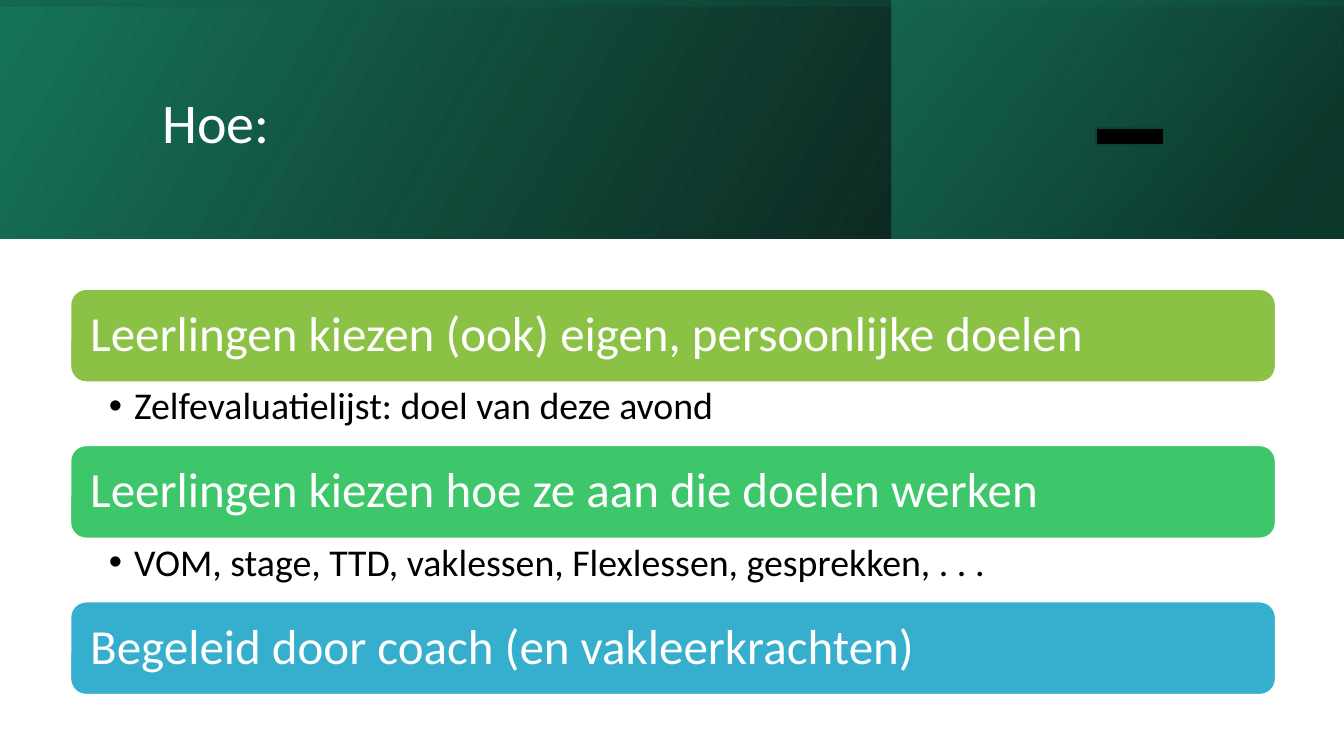
from pptx import Presentation
from pptx.dml.color import RGBColor
from pptx.enum.shapes import MSO_SHAPE
from pptx.enum.text import MSO_ANCHOR, MSO_AUTO_SIZE, PP_ALIGN
from pptx.oxml import parse_xml
from pptx.oxml.ns import nsdecls
from pptx.util import Inches, Pt

RECT, ROUND = MSO_SHAPE.RECTANGLE, MSO_SHAPE.ROUNDED_RECTANGLE
MIDDLE, TOP = MSO_ANCHOR.MIDDLE, MSO_ANCHOR.TOP
LEFT, FIXED = PP_ALIGN.LEFT, MSO_AUTO_SIZE.NONE


def color(code):
    return RGBColor.from_string(code)


def write(shape, text, size, code, anchor, pads):
    frame = shape.text_frame
    frame.word_wrap = True
    frame.auto_size = FIXED
    frame.vertical_anchor = anchor
    frame.margin_left, frame.margin_top, frame.margin_right, frame.margin_bottom = map(Inches, pads)
    par = frame.paragraphs[0]
    par.alignment = LEFT
    par.line_spacing = 0.9
    par.space_before = Pt(0)
    run = par.add_run()
    run.text = text
    run.font.name = "Calibri"
    run.font.size = Pt(size)
    run.font.color.rgb = color(code)
    return par


prs = Presentation()
prs.slide_width, prs.slide_height = Inches(13.33), Inches(7.5)
slide = prs.slides.add_slide(prs.slide_layouts[3])
shapes = slide.shapes
title, *lists = slide.placeholders

# Header: three see-through gradients, placed behind the title
# box, turn, angle, stops (position, colour, opacity in percent)
layers = [
    ((0, 0, 13.33, 2.37), 0, 330, [(0, "000000", 96), (100, "16745A", 100)]),
    ((8.84, 0, 4.48, 2.37), 0, 320, [(19, "0E4D3C", 68), (100, "1D9A78", 48)]),
    ((5.48, -5.48, 2.37, 13.33), 270, 350, [(23, "16745A", 16), (99, "000000", 45)]),
]
for box, turn, angle, stops in layers:
    layer = shapes.add_shape(RECT, *map(Inches, box))
    layer.rotation = turn
    layer.shadow.inherit = False
    layer.line.fill.background()
    marks = "".join(
        f'<a:gs pos="{pos * 1000}"><a:srgbClr val="{code}">'
        f'<a:alpha val="{alpha * 1000}"/></a:srgbClr></a:gs>'
        for pos, code, alpha in stops
    )
    props = layer.element.spPr
    props.xfrm.set("flipH", "1")
    props.insert(2, parse_xml(
        f'<a:gradFill {nsdecls("a")} rotWithShape="1"><a:gsLst>{marks}</a:gsLst>'
        f'<a:lin ang="{angle * 60000}" scaled="0"/></a:gradFill>'
    ))
    title.element.addprevious(layer.element)

# Title
title.left, title.top = Inches(1.51), Inches(0.38)
title.width, title.height = Inches(10.63), Inches(1.72)
write(title, "Hoe:", 40, "FFFFFF", MIDDLE, (0.1, 0.05, 0.1, 0.05))

# Coloured bars
bars = [
    ("Leerlingen kiezen (ook) eigen, persoonlijke doelen", "8BC145"),
    ("Leerlingen kiezen hoe ze aan die doelen werken", "3EC76A"),
    ("Begeleid door coach (en vakleerkrachten)", "36AFCE"),
]
X, Y, WIDE, HIGH, STEP = 0.7, 2.87, 11.95, 0.92, 1.55
for row, (text, code) in enumerate(bars):
    bar = shapes.add_shape(ROUND, Inches(X), Inches(Y + row * STEP), Inches(WIDE), Inches(HIGH))
    bar.shadow.inherit = False
    bar.fill.solid()
    bar.fill.fore_color.rgb = color(code)
    bar.line.color.rgb = color("FFFFFF")
    bar.line.width = Pt(1)
    # The rounded corners already add 0.04 to the left and right padding
    write(bar, text, 35, "FFFFFF", MIDDLE, (0.15, 0.15, 0.15, 0.15))

# Bulleted details under the first two bars
notes = [
    "Zelfevaluatielijst: doel van deze avond",
    "VOM, stage, TTD, vaklessen, Flexlessen, gesprekken, . . .",
]
for row, (item, text) in enumerate(zip(lists, notes)):
    item.left, item.top = Inches(X), Inches(Y + HIGH + row * STEP)
    item.width, item.height = Inches(WIDE), Inches(STEP - HIGH)
    par = write(item, text, 27, "000000", TOP, (0.38, 0.05, 0.27, 0.05))
    props = par._p.get_or_add_pPr()
    props.set("marL", str(Inches(0.25)))
    props.set("indent", str(Inches(-0.25)))
    props.append(parse_xml(f'<a:buChar {nsdecls("a")} char="•"/>'))

# Black dash in the header
dash = shapes.add_shape(RECT, Inches(10.87), Inches(1.27), Inches(0.67), Inches(0.17))
dash.shadow.inherit = False
dash.fill.solid()
dash.fill.fore_color.rgb = color("000000")
dash.line.color.rgb = color("0D4335")
dash.line.width = Pt(1)

# Drop placeholders left without text
for item in list(slide.placeholders):
    if not item.has_text_frame or not item.text_frame.text:
        item.element.getparent().remove(item.element)

prs.save("out.pptx")
